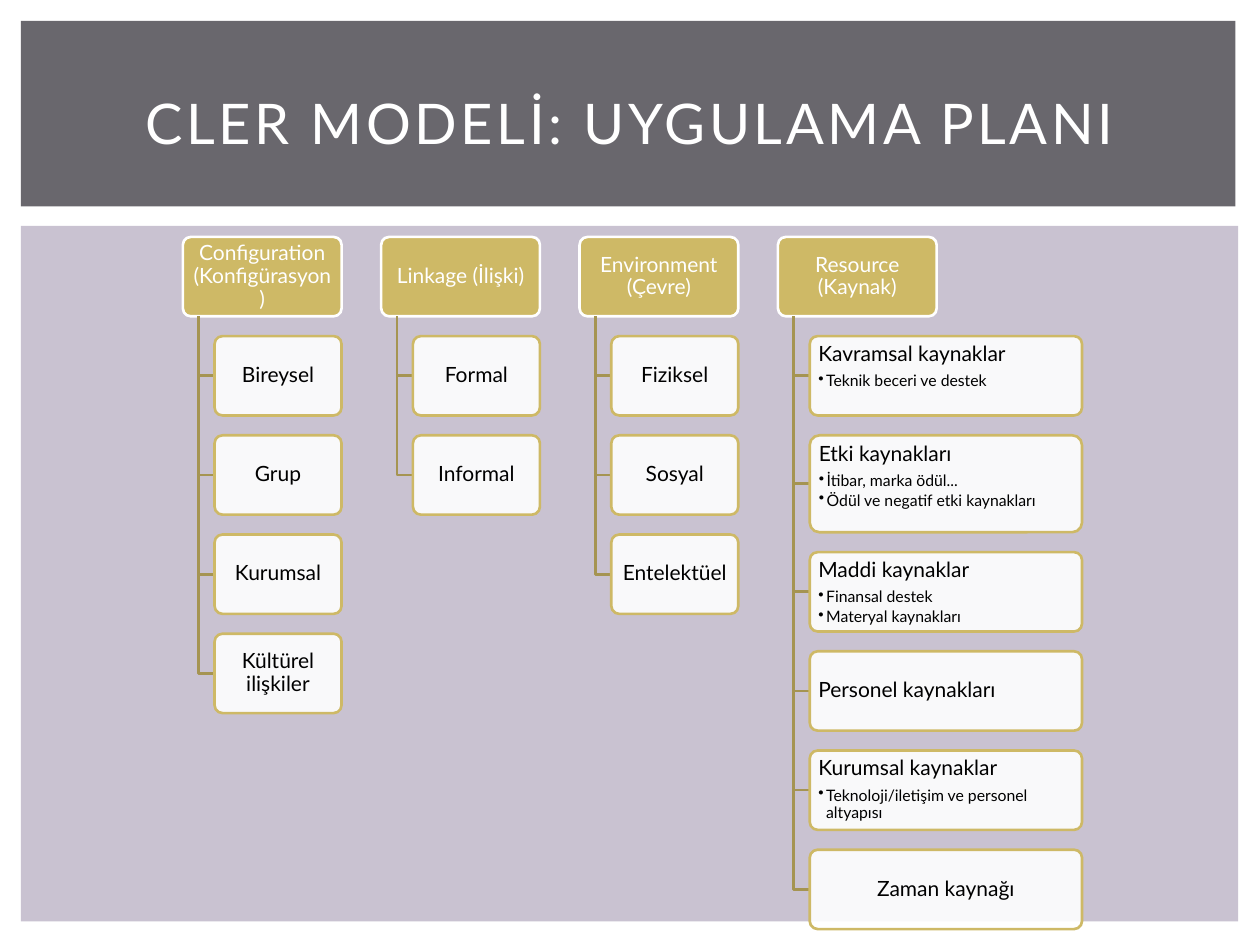
from dataclasses import dataclass

from lxml import etree
from pptx import Presentation
from pptx.dml.color import RGBColor
from pptx.enum.shapes import MSO_SHAPE
from pptx.enum.text import MSO_ANCHOR, PP_ALIGN
from pptx.oxml.ns import qn
from pptx.util import Pt

RECTANGLE, ROUNDED = MSO_SHAPE.RECTANGLE, MSO_SHAPE.ROUNDED_RECTANGLE
LEFT, CENTER = PP_ALIGN.LEFT, PP_ALIGN.CENTER
TOP, MIDDLE = MSO_ANCHOR.TOP, MSO_ANCHOR.MIDDLE

FONT = "Lato"
WHITE, BLACK = "FFFFFF", "000000"
GOLD, DARK_GOLD = "CEB966", "A59452"
GRAY, LILAC = "69676D", "C9C2D1"

FIRST_LEFT, FIRST_TOP = 104.5, 135.4
COLUMN_PITCH = 113.35
HEADER_WIDTH, BOX_HEIGHT = 90.7, 45.35
GAP = BOX_HEIGHT / 4
ITEM_INDENT = HEADER_WIDTH / 5
TRUNK_INDENT = HEADER_WIDTH / 10
ITEM_WIDTH = HEADER_WIDTH - ITEM_INDENT
BULLET_INDENT = 4.5


@dataclass
class Item:
    text: str
    bullets: tuple[str, ...] = ()
    align: PP_ALIGN = CENTER
    height: float = BOX_HEIGHT


@dataclass
class Column:
    header: str
    items: list[Item]
    item_width: float = ITEM_WIDTH


COLUMNS = [
    Column("Configuration (Konfigürasyon)",
           [Item("Bireysel"), Item("Grup"), Item("Kurumsal"), Item("Kültürel ilişkiler")]),
    Column("Linkage (İlişki)", [Item("Formal"), Item("Informal")]),
    Column("Environment (Çevre)", [Item("Fiziksel"), Item("Sosyal"), Item("Entelektüel")]),
    Column("Resource (Kaynak)", [
        Item("Kavramsal kaynaklar", ("Teknik beceri ve destek",), LEFT),
        Item("Etki kaynakları",
             ("İtibar, marka ödül...", "Ödül ve negatif etki kaynakları"), LEFT, 55.4),
        Item("Maddi kaynaklar", ("Finansal destek", "Materyal kaynakları"), LEFT),
        Item("Personel kaynakları", align=LEFT),
        Item("Kurumsal kaynaklar", ("Teknoloji/iletişim ve personel altyapısı",), LEFT),
        Item("Zaman kaynağı"),
    ], 155.6),
]


def color(hex_value: str) -> RGBColor:
    return RGBColor.from_string(hex_value)


def add_box(shapes, kind, left: float, top: float, width: float, height: float,
            fill: str, line: str | None = None, opacity: int = 100):
    shape = shapes.add_shape(kind, Pt(left), Pt(top), Pt(width), Pt(height))
    shape.shadow.inherit = False
    shape.fill.solid()
    shape.fill.fore_color.rgb = color(fill)
    if opacity < 100:
        fill_color = shape.fill._xPr.find(qn("a:solidFill"))[0]
        etree.SubElement(fill_color, qn("a:alpha"), val=str(opacity * 1000))
    if line:
        shape.line.color.rgb = color(line)
        shape.line.width = Pt(1.5)
    else:
        shape.line.fill.background()
    if kind == ROUNDED:
        shape.adjustments[0] = 0.1
    return shape


def prepare_frame(shape, anchor: MSO_ANCHOR, side: float, vertical: float):
    frame = shape.text_frame
    frame.word_wrap = True
    frame.vertical_anchor = anchor
    frame.margin_left = frame.margin_right = Pt(side)
    frame.margin_top = frame.margin_bottom = Pt(vertical)
    return frame


def write(paragraph, text: str, *, size: float = 12, font_color: str = BLACK,
          align: PP_ALIGN = CENTER, line_spacing: float = 0.9, space_after: float = 4.2,
          tracking: float = 0, bullet: bool = False) -> None:
    paragraph.alignment = align
    paragraph.line_spacing = line_spacing
    paragraph.space_after = Pt(space_after)
    run = paragraph.add_run()
    run.text = text
    run.font.name = FONT
    run.font.size = Pt(size)
    run.font.color.rgb = color(font_color)
    if tracking:
        run.font._element.set("spc", str(round(tracking * 100)))
    if bullet:
        paragraph.level = 1
        properties = paragraph._p.get_or_add_pPr()
        properties.set("marL", str(Pt(BULLET_INDENT)))
        properties.set("indent", str(-Pt(BULLET_INDENT)))
        etree.SubElement(properties, qn("a:buChar"), char="•")


def add_elbow(shapes, left: float, top: float, right: float, bottom: float) -> None:
    """Draw an open line that goes down and then right."""
    builder = shapes.build_freeform(Pt(left), Pt(top))
    builder.add_line_segments([(Pt(left), Pt(bottom)), (Pt(right), Pt(bottom))], close=False)
    elbow = builder.convert_to_shape()
    elbow.shadow.inherit = False
    elbow.fill.background()
    elbow.line.color.rgb = color(DARK_GOLD)
    elbow.line.width = Pt(1.5)


def add_item(shapes, item: Item, left: float, top: float, width: float) -> None:
    shape = add_box(shapes, ROUNDED, left, top, width, item.height, WHITE, GOLD, 90)
    frame = prepare_frame(shape, TOP if item.bullets else MIDDLE, 3.6, 2.8)
    write(frame.paragraphs[0], item.text, align=item.align)
    for text in item.bullets:
        write(frame.add_paragraph(), text, size=9, align=LEFT, space_after=1.35, bullet=True)


def add_column(shapes, column: Column, left: float) -> None:
    header = add_box(shapes, ROUNDED, left, FIRST_TOP, HEADER_WIDTH, BOX_HEIGHT, GOLD, WHITE)
    frame = prepare_frame(header, MIDDLE, 3.6, 2.8)
    write(frame.paragraphs[0], column.header, font_color=WHITE)
    header_bottom = FIRST_TOP + BOX_HEIGHT
    item_left = left + ITEM_INDENT
    top = header_bottom + GAP
    for item in column.items:
        add_elbow(shapes, left + TRUNK_INDENT, header_bottom, item_left, top + item.height / 2)
        add_item(shapes, item, item_left, top, column.item_width)
        top += item.height + GAP


def main() -> None:
    presentation = Presentation()
    presentation.slide_width, presentation.slide_height = Pt(720), Pt(540)
    slide = presentation.slides.add_slide(presentation.slide_layouts[6])
    shapes = slide.shapes

    add_box(shapes, RECTANGLE, 12, 129, 695.5, 397.5, LILAC)
    add_box(shapes, RECTANGLE, 12, 12, 694, 106, GRAY)
    for index, column in enumerate(COLUMNS):
        add_column(shapes, column, FIRST_LEFT + index * COLUMN_PITCH)

    title = shapes.add_textbox(Pt(30), Pt(28), Pt(660), Pt(83))
    frame = prepare_frame(title, MIDDLE, 7.2, 3.6)
    write(frame.paragraphs[0], "CLER MODELİ: UYGULAMA PLANI", size=32, font_color=WHITE,
          line_spacing=1.0, space_after=0, tracking=2)

    presentation.save("out.pptx")


if __name__ == "__main__":
    main()
